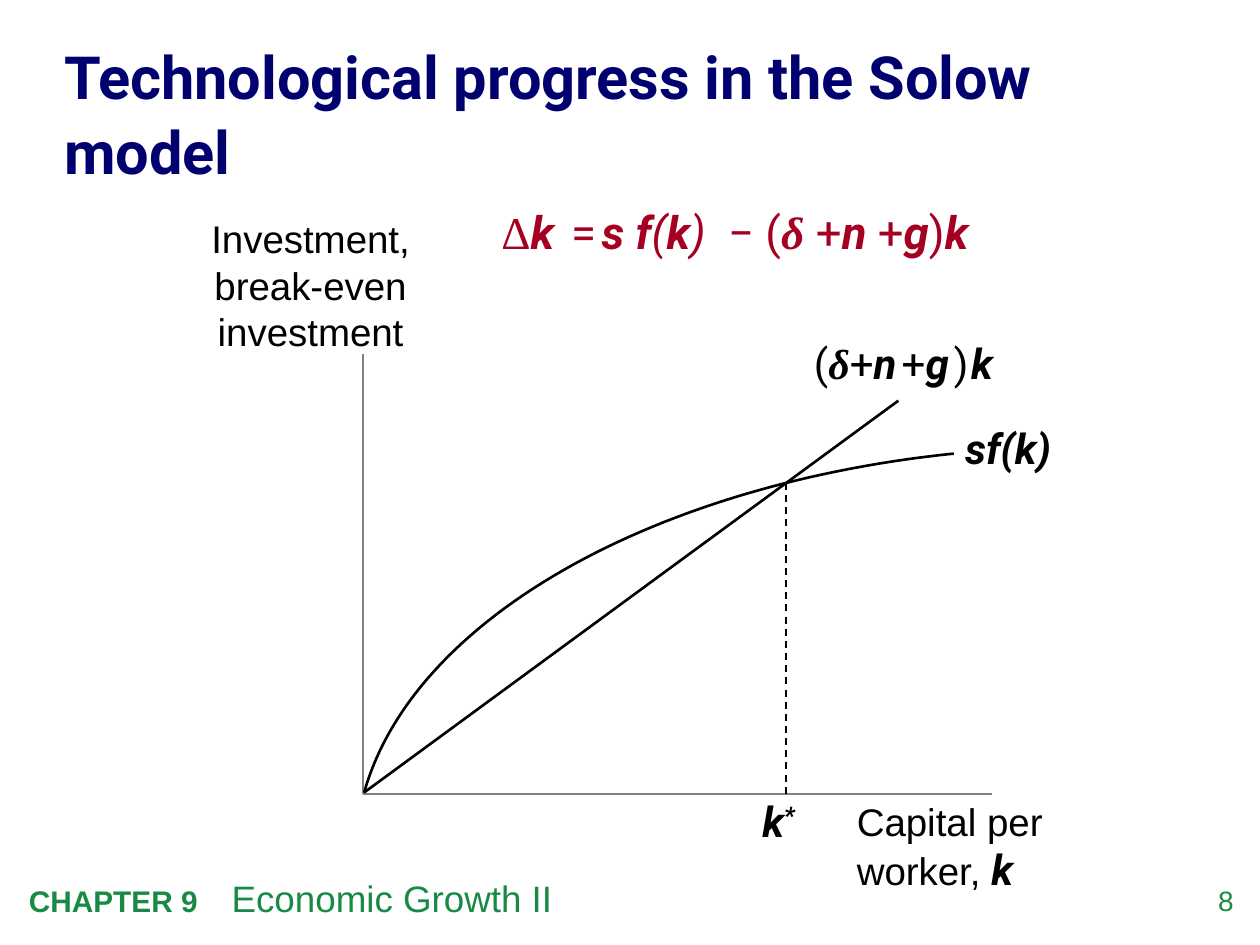
from lxml import etree
from pptx import Presentation
from pptx.dml.color import RGBColor
from pptx.enum.dml import MSO_LINE
from pptx.enum.shapes import MSO_CONNECTOR
from pptx.enum.text import MSO_ANCHOR, PP_ALIGN
from pptx.oxml.ns import qn
from pptx.util import Inches, Pt

LEFT, CENTER, RIGHT = PP_ALIGN.LEFT, PP_ALIGN.CENTER, PP_ALIGN.RIGHT
MIDDLE, TOP = MSO_ANCHOR.MIDDLE, MSO_ANCHOR.TOP
STRAIGHT, DASH = MSO_CONNECTOR.STRAIGHT, MSO_LINE.DASH
BLACK, WHITE, GRAY, NAVY, RED, GREEN = "000000", "FFFFFF", "808080", "00006E", "A50021", "198A46"
FONTS = {"a": "Arial", "r": "Roboto", "t": "Times New Roman"}

TITLE = "Technological progress in the Solow model"

# Run: text, size, style letters (font key, then b and i), extra letter spacing
CHANGE_IN_CAPITAL = [
    ("Δ", 26, "t"), ("k", 26, "rbi"), (" ", 26, "r", 3.2), ("=", 26, "r"), (" ", 13, "r"),
    ("s f", 26, "rbi"), ("(", 26, "ri"), ("k", 26, "rbi"), (")", 26, "ri"), (" ", 26, "ri", 6.5),
    ("− (", 26, "r"), ("δ ", 26, "tbi"), ("+", 26, "r"), ("n ", 26, "rbi"), ("+", 26, "r"),
    ("g", 26, "rbi"), (")", 26, "r"), ("k", 26, "rbi"),
]
BREAK_EVEN = [
    ("(", 24, "r"), ("δ", 24, "tbi"), ("+", 24, "r"), ("n", 24, "rbi"), (" ", 12, "r"),
    ("+", 24, "r"), ("g", 24, "rbi"), (" ", 12, "r"), (")", 24, "r"), (" ", 6, "r"), ("k", 24, "rbi"),
]
VERTICAL_AXIS = [("Investment, break-even investment", 22, "a")]
HORIZONTAL_AXIS = [("Capital per worker, ", 22, "a"), ("k", 24, "rbi")]
INVESTMENT = [("sf(k)", 24, "rbi")]
STEADY_STATE = [("k", 24, "rbi"), ("*", 24, "rbi^")]
FOOTER = [("CHAPTER 9\t", 17, "ab"), ("Economic Growth II", 21, "a")]
PAGE = [("8", 16, "a")]

ORIGIN_X, ORIGIN_Y = 2.88, 6.3
AXIS_TOP, AXIS_RIGHT = 2.47, 7.87
LINE_END = (7.13, 3.18)
STEADY_X = 6.24
CURVE = [(7.57, 3.6), (5.15, 3.85), (3.27, 4.93), (2.89, 6.29)]
CURVE_STEPS = 60


def rgb(value):
    return RGBColor.from_string(value)


def write(frame, runs, color, align=LEFT, anchor=MIDDLE, margins=(0, 0, 0, 0), spacing=1.0):
    frame.word_wrap = True
    frame.vertical_anchor = anchor
    frame.margin_left, frame.margin_top, frame.margin_right, frame.margin_bottom = map(Inches, margins)
    paragraph = frame.paragraphs[0]
    paragraph.alignment, paragraph.line_spacing = align, spacing
    for text, size, style, *tracking in runs:
        run = paragraph.add_run()
        run.text = text
        font = run.font
        font.name, font.size = FONTS[style[0]], Pt(size)
        font.bold, font.italic = "b" in style, "i" in style
        font.color.rgb = rgb(color)
        properties = run._r.get_or_add_rPr()
        if tracking:
            properties.set("spc", str(round(tracking[0] * 100)))
        if "^" in style:
            properties.set("baseline", "30000")
    return paragraph


def label(slide, box, runs, color=BLACK, fill=None, **layout):
    area = slide.shapes.add_textbox(*map(Inches, box))
    if fill:
        area.fill.solid()
        area.fill.fore_color.rgb = rgb(fill)
    return area, write(area.text_frame, runs, color, **layout)


def segment(slide, start, end, color, width, dash=None):
    line = slide.shapes.add_connector(STRAIGHT, *map(Inches, (*start, *end)))
    line.line.color.rgb, line.line.width = rgb(color), Pt(width)
    if dash:
        line.line.dash_style = dash
    etree.SubElement(line._element.spPr, qn("a:effectLst"))


def bezier(controls, t):
    weights = ((1 - t) ** 3, 3 * t * (1 - t) ** 2, 3 * t * t * (1 - t), t ** 3)
    return tuple(Inches(sum(w * point[axis] for w, point in zip(weights, controls))) for axis in (0, 1))


def draw_diagram(slide):
    origin = (ORIGIN_X, ORIGIN_Y)
    segment(slide, (ORIGIN_X, AXIS_TOP), origin, GRAY, 1)
    segment(slide, origin, (AXIS_RIGHT, ORIGIN_Y), GRAY, 1)
    label(slide, (1.46, 1.71, 2.01, 1.1), VERTICAL_AXIS, fill=WHITE, align=CENTER)
    label(slide, (6.8, 6.33, 1.75, 0.77), HORIZONTAL_AXIS)

    start, *rest = [bezier(CURVE, step / CURVE_STEPS) for step in range(CURVE_STEPS + 1)]
    builder = slide.shapes.build_freeform(*start)
    builder.add_line_segments(rest, close=False)
    curve = builder.convert_to_shape()
    curve.fill.background()
    curve.line.color.rgb, curve.line.width = rgb(BLACK), Pt(1.5)
    curve.shadow.inherit = False
    label(slide, (7.66, 3.35, 1.04, 0.4), INVESTMENT)

    label(slide, (6.46, 2.68, 1.92, 0.4), BREAK_EVEN)
    segment(slide, CURVE[-1], LINE_END, BLACK, 1.5)
    share = (STEADY_X - ORIGIN_X) / (LINE_END[0] - ORIGIN_X)
    steady_y = ORIGIN_Y + share * (LINE_END[1] - ORIGIN_Y)
    label(slide, (6.05, 6.31, 0.58, 0.5), STEADY_STATE, margins=(0, 0, 0, 0.1))
    segment(slide, (STEADY_X, steady_y), (STEADY_X, ORIGIN_Y), BLACK, 1, DASH)


def main():
    """Build the slide on technological progress in the Solow model."""
    deck = Presentation()
    deck.slide_width, deck.slide_height = Inches(10), Inches(7.5)
    slide = deck.slides.add_slide(deck.slide_layouts[5])

    title = slide.shapes.title
    title.left, title.top, title.width, title.height = map(Inches, (0.51, 0.3, 8.9, 1.17))
    write(title.text_frame, [(TITLE, 34, "rb")], NAVY, spacing=1.05)

    inset = (0.1, 0.05, 0.1, 0.05)
    label(slide, (9.24, 7.01, 0.55, 0.32), PAGE, GREEN, align=RIGHT, anchor=TOP)
    _, footer = label(slide, (0.13, 6.9, 8.18, 0.45), FOOTER, GREEN, anchor=TOP, margins=inset)
    stops = etree.SubElement(footer._p.get_or_add_pPr(), qn("a:tabLst"))
    etree.SubElement(stops, qn("a:tab"), pos=str(Inches(1.61)), algn="l")

    draw_diagram(slide)

    equation, _ = label(slide, (3.88, 1.57, 4.58, 0.54), CHANGE_IN_CAPITAL, RED, WHITE, anchor=TOP, margins=inset)
    tint = equation._element.spPr.find(qn("a:solidFill"))[0]
    etree.SubElement(tint, qn("a:alpha"), val="50000")

    deck.save("out.pptx")


if __name__ == "__main__":
    main()
